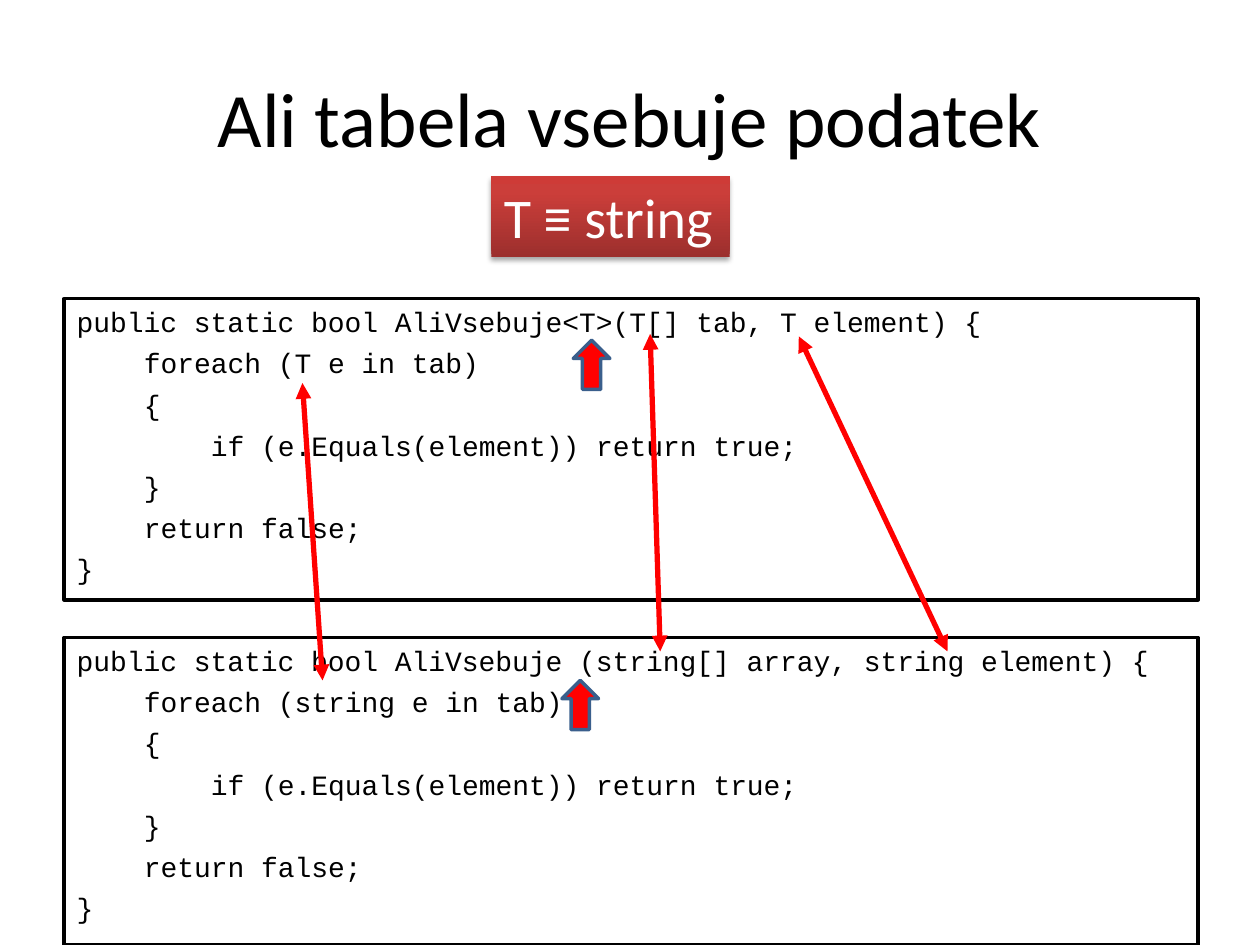
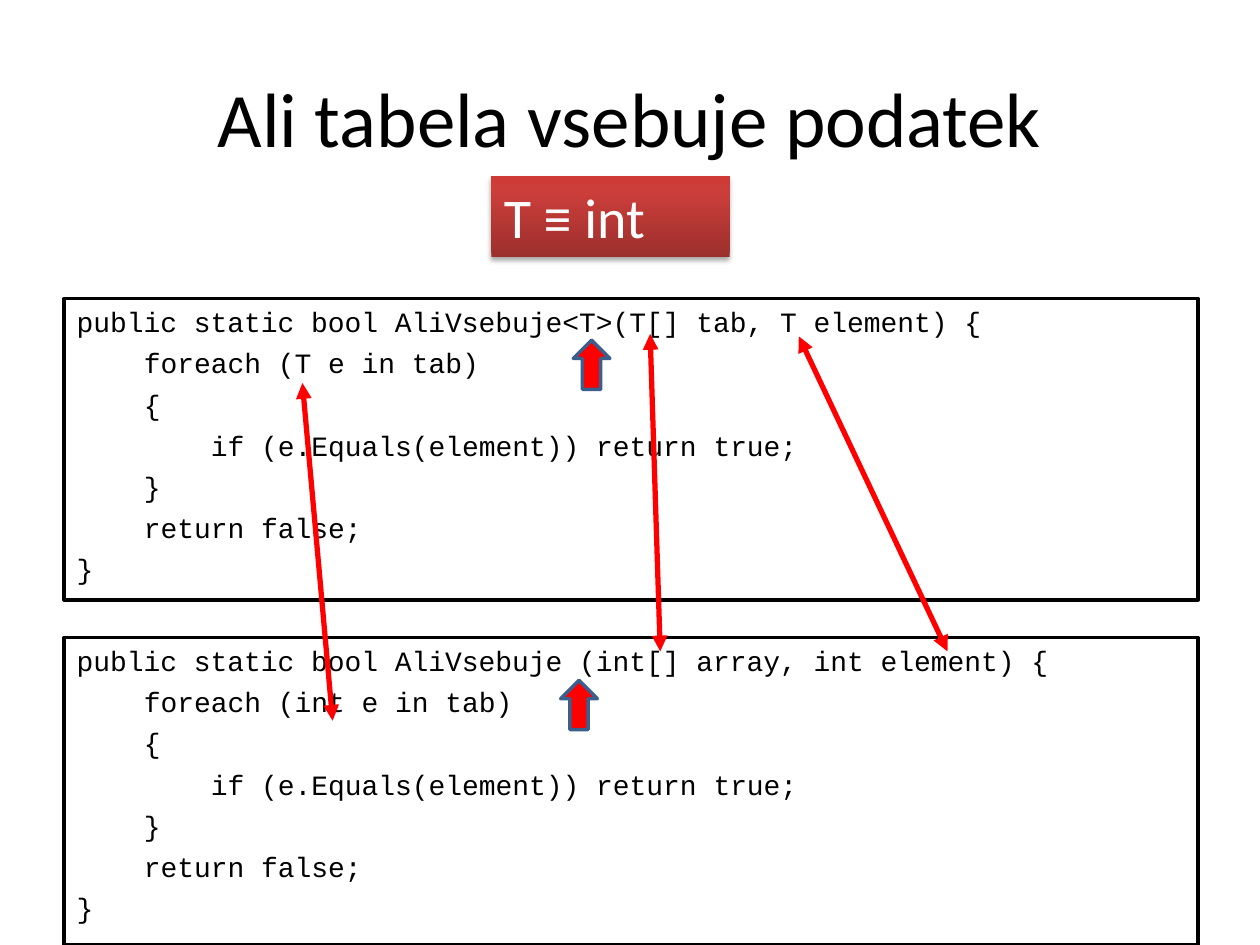
from pptx import Presentation
from pptx.dml.color import RGBColor
from pptx.enum.shapes import MSO_CONNECTOR, MSO_SHAPE
from pptx.enum.text import MSO_ANCHOR, MSO_AUTO_SIZE, PP_ALIGN
from pptx.oxml import parse_xml
from pptx.oxml.ns import nsdecls, qn
from pptx.util import Inches, Pt
from lxml import etree

BLACK = RGBColor(0x00, 0x00, 0x00)
WHITE = RGBColor(0xFF, 0xFF, 0xFF)
RED = RGBColor(0xFF, 0x00, 0x00)
ARROW_EDGE = RGBColor(0x3A, 0x5F, 0x8C)
BADGE_STOPS = [
    (0, RGBColor(0x9C, 0x2F, 0x2D)),
    (80, RGBColor(0xCB, 0x3E, 0x3A)),
    (100, RGBColor(0xCE, 0x3B, 0x37)),
]
TITLE_FONT = "Calibri"
CODE_FONT = "Courier New"
CODE_SIZE = 16
INDENT = Inches(4 * 0.6 * CODE_SIZE / 72)  # four monospaced characters

TITLE = "Ali tabela vsebuje podatek"
GENERIC_SIGNATURE = "AliVsebuje<T>(T[] tab, T element)"


def add_span(para, text, font, size, color):
    span = para.add_run()
    span.text = text
    span.font.name = font
    span.font.size = Pt(size)
    span.font.color.rgb = color


def add_title(page):
    title = page.shapes.title
    title.left, title.top = Inches(0.5), Inches(0.3)
    title.width, title.height = Inches(9), Inches(1.25)
    title.text_frame.vertical_anchor = MSO_ANCHOR.MIDDLE
    para = title.text_frame.paragraphs[0]
    para.alignment = PP_ALIGN.CENTER
    add_span(para, TITLE, TITLE_FONT, 44, BLACK)


def add_box(page, shape_type, left, top, width, height):
    box = page.shapes.add_shape(
        shape_type, Inches(left), Inches(top), Inches(width), Inches(height))
    box.shadow.inherit = False
    return box


def style_box(box, fill, line):
    box.fill.solid()
    box.fill.fore_color.rgb = fill
    box.line.color.rgb = line
    box.line.width = Pt(2)


def code_lines(signature, element_type):
    """Return (indent level, text) for each line of the method."""
    return [
        (0, f"public static bool {signature} {{"),
        (1, f"foreach ({element_type} e in tab)"),
        (1, "{"),
        (2, "if (e.Equals(element)) return true;"),
        (1, "}"),
        (1, "return false;"),
        (0, "}"),
    ]


def add_code(page, top, height, lines):
    box = add_box(page, MSO_SHAPE.RECTANGLE, 0.51, top, 9, height)
    style_box(box, WHITE, BLACK)
    frame = box.text_frame
    frame.word_wrap = True
    frame.vertical_anchor = MSO_ANCHOR.TOP
    for number, (level, text) in enumerate(lines):
        para = frame.add_paragraph() if number else frame.paragraphs[0]
        para.alignment = PP_ALIGN.LEFT
        para.space_before = Pt(4.3)
        para._p.get_or_add_pPr().set("marL", str(level * INDENT))
        add_span(para, text, CODE_FONT, CODE_SIZE, BLACK)


def add_badge(page, text):
    """Add the red gradient label with a soft shadow below it."""
    badge = add_box(page, MSO_SHAPE.RECTANGLE, 3.9, 1.4, 1.89, 0.64)
    badge.line.fill.background()
    badge.fill.gradient()
    badge.fill.gradient_angle = 90
    properties = badge._element.spPr
    stops = properties.find(".//" + qn("a:gsLst"))
    for stop in list(stops):
        stops.remove(stop)
    for position, color in BADGE_STOPS:
        stop = etree.SubElement(stops, qn("a:gs"), pos=str(position * 1000))
        etree.SubElement(stop, qn("a:srgbClr"), val=str(color))
    properties.find(qn("a:effectLst")).append(parse_xml(
        f'<a:outerShdw {nsdecls("a")} blurRad="{Pt(3.1)}" dist="{Pt(1.8)}" '
        'dir="5400000" rotWithShape="0"><a:srgbClr val="000000">'
        '<a:alpha val="35000"/></a:srgbClr></a:outerShdw>'))
    frame = badge.text_frame
    frame.word_wrap = True
    frame.auto_size = MSO_AUTO_SIZE.SHAPE_TO_FIT_TEXT
    frame.vertical_anchor = MSO_ANCHOR.TOP
    para = frame.paragraphs[0]
    para.alignment = PP_ALIGN.LEFT
    add_span(para, text, TITLE_FONT, 32, WHITE)


def add_double_arrow(page, start, end):
    arrow = page.shapes.add_connector(
        MSO_CONNECTOR.STRAIGHT, *map(Inches, start + end))
    arrow.line.color.rgb = RED
    arrow.line.width = Pt(3)
    line = arrow.line._get_or_add_ln()
    for end_tag in ("a:headEnd", "a:tailEnd"):
        etree.SubElement(line, qn(end_tag), type="triangle")
    etree.SubElement(arrow._element.spPr, qn("a:effectLst"))


def add_pointer(page, left, top):
    pointer = add_box(page, MSO_SHAPE.UP_ARROW, left, top, 0.29, 0.39)
    style_box(pointer, RED, ARROW_EDGE)


def add_substitution_page(deck, type_name, loop_arrow_start, pointer_left):
    """Add a page that shows the generic method with T replaced by a type."""
    page = deck.slides.add_slide(deck.slide_layouts[5])
    add_title(page)
    signature = f"AliVsebuje ({type_name}[] array, {type_name} element)"
    add_code(page, 2.37, 2.39, code_lines(GENERIC_SIGNATURE, "T"))
    add_code(page, 5.06, 2.44, code_lines(signature, type_name))
    add_double_arrow(page, loop_arrow_start, (2.4, 3.04))
    add_double_arrow(page, (5.16, 2.65), (5.24, 5.17))
    add_badge(page, f"T ≡ {type_name}")
    add_double_arrow(page, (6.34, 2.67), (7.52, 5.17))
    add_pointer(page, 4.55, 2.7)
    add_pointer(page, pointer_left, 5.4)


def main():
    deck = Presentation()
    deck.slide_width, deck.slide_height = Inches(10), Inches(7.5)
    add_substitution_page(deck, "string", (2.56, 5.4), 4.46)
    add_substitution_page(deck, "int", (2.64, 5.72), 4.45)
    deck.save("out.pptx")


if __name__ == "__main__":
    main()
